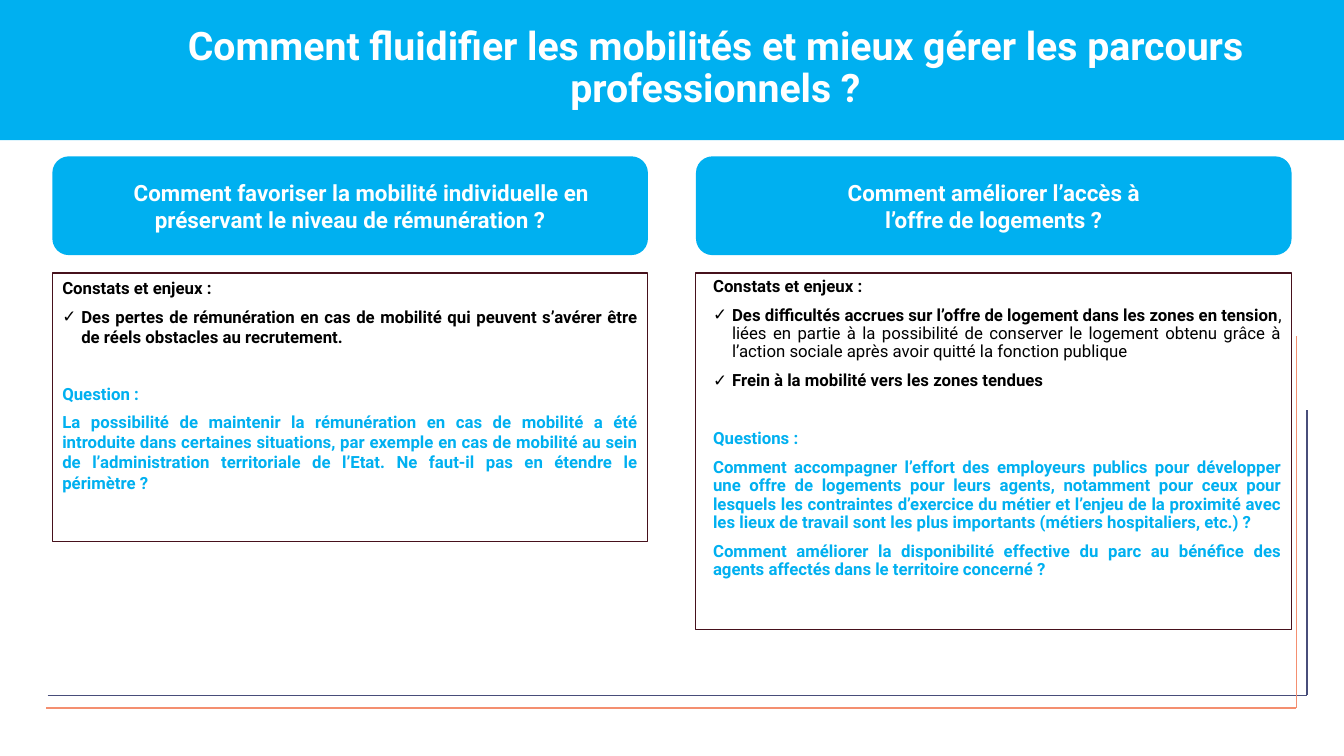
from lxml import etree
from pptx import Presentation
from pptx.dml.color import RGBColor
from pptx.enum.shapes import MSO_CONNECTOR, MSO_SHAPE
from pptx.enum.text import MSO_ANCHOR, MSO_AUTO_SIZE, PP_ALIGN
from pptx.oxml.ns import qn
from pptx.util import Cm, Pt

STRAIGHT = MSO_CONNECTOR.STRAIGHT
RECTANGLE, ROUNDED = MSO_SHAPE.RECTANGLE, MSO_SHAPE.ROUNDED_RECTANGLE
TOP, MIDDLE = MSO_ANCHOR.TOP, MSO_ANCHOR.MIDDLE
LEFT, CENTER, JUSTIFY = PP_ALIGN.LEFT, PP_ALIGN.CENTER, PP_ALIGN.JUSTIFY
NO_AUTOFIT = MSO_AUTO_SIZE.NONE

COLOURS = {
    "blue": "00B0F0",
    "white": "FFFFFF",
    "black": "000000",
    "plum": "46111C",
    "navy": "484D7A",
    "coral": "F48F70",
}
FONT = "Roboto"
HANGING = 0.48
COLUMN_WIDTH = 15.01
HEADING_TOP, HEADING_HEIGHT = 3.94, 2.49
BODY_TOP = 6.88


def colour(name):
    return RGBColor.from_string(COLOURS[name])


def apply(target, values):
    for name, value in values.items():
        setattr(target, name, value)


class SlideBuilder:
    def __init__(self, presentation):
        self.slide = presentation.slides.add_slide(presentation.slide_layouts[5])

    def line(self, start_x, start_y, end_x, end_y, line_colour):
        connector = self.slide.shapes.add_connector(
            STRAIGHT, Cm(start_x), Cm(start_y), Cm(end_x), Cm(end_y))
        connector.line.color.rgb = colour(line_colour)
        connector.line.width = Pt(1)
        etree.SubElement(connector._element.spPr, qn("a:effectLst"))

    def paragraph(self, paragraph, runs, size, text_colour, bullet=False,
                  margin=0, indent=0, **values):
        properties = paragraph._p.get_or_add_pPr()
        properties.set("marL", str(Cm(margin)))
        properties.set("indent", str(Cm(indent)))
        properties.set("hangingPunct", "0")
        if bullet:
            etree.SubElement(properties, qn("a:buFont"), typeface=FONT)
            etree.SubElement(properties, qn("a:buChar"), char="✓")
        apply(paragraph, values)
        for text, bold in runs:
            run = paragraph.add_run()
            run.text = text
            apply(run.font, {"name": FONT, "size": Pt(size), "bold": bold})
            run.font.color.rgb = colour(text_colour)

    def frame(self, shape, anchor):
        apply(shape.text_frame, {
            "word_wrap": True, "auto_size": NO_AUTOFIT, "vertical_anchor": anchor})
        return shape.text_frame

    def title(self, text):
        shape = self.slide.shapes.title
        apply(shape, {"left": Cm(0), "top": Cm(-0.08),
                      "width": Cm(33.87), "height": Cm(3.61)})
        shape.fill.solid()
        shape.fill.fore_color.rgb = colour("blue")
        frame = self.frame(shape, MIDDLE)
        apply(frame, {"margin_left": Cm(2.39), "margin_right": Cm(0.2),
                      "margin_top": Cm(0.2), "margin_bottom": Cm(0.2)})
        self.paragraph(frame.paragraphs[0], [(text, True)], 28, "white",
                       alignment=CENTER, line_spacing=0.9, space_before=Pt(0))

    def box(self, kind, left, top, height, fill=None, border=None, anchor=TOP):
        shape = self.slide.shapes.add_shape(
            kind, Cm(left), Cm(top), Cm(COLUMN_WIDTH), Cm(height))
        shape.shadow.inherit = False
        if fill:
            shape.fill.solid()
            shape.fill.fore_color.rgb = colour(fill)
        else:
            shape.fill.background()
        if border:
            shape.line.color.rgb = colour(border)
            shape.line.width = Pt(0.75)
        else:
            shape.line.fill.background()
        return self.frame(shape, anchor)

    def heading(self, left, lines, indent=0):
        frame = self.box(ROUNDED, left, HEADING_TOP, HEADING_HEIGHT,
                         fill="blue", anchor=MIDDLE)
        for index, text in enumerate(lines):
            paragraph = frame.add_paragraph() if index else frame.paragraphs[0]
            self.paragraph(paragraph, [(text, True)], 16, "white",
                           indent=indent, alignment=CENTER)

    def body(self, left, height, items, margin, question_gap, spacing):
        frame = self.box(RECTANGLE, left, BODY_TOP, height, border="plum")
        for index, (role, runs) in enumerate(items):
            bullet = role == "finding"
            before = {"label": 0, "question label": question_gap}.get(role, 6)
            self.paragraph(
                frame.add_paragraph() if index else frame.paragraphs[0],
                runs, 12, "blue" if role.startswith("question") else "black",
                bullet=bullet,
                margin=margin + HANGING * bullet,
                indent=-HANGING * bullet,
                alignment=LEFT if role == "label" else JUSTIFY,
                space_before=Pt(before), **spacing)


LEFT_COLUMN, RIGHT_COLUMN = 1.32, 17.54

MOBILITY = [
    ("label", [("Constats et enjeux :", True)]),
    ("finding", [("Des pertes de rémunération en cas de mobilité qui peuvent s’avérer "
                  "être de réels obstacles au recrutement.", True)]),
    ("question label", [("Question :", True)]),
    ("question", [("La possibilité de maintenir la rémunération en cas de mobilité a été "
                   "introduite dans certaines situations, par exemple en cas de mobilité "
                   "au sein de l’administration territoriale de l’Etat. Ne faut-il pas en "
                   "étendre le périmètre ?", True)]),
]
HOUSING = [
    ("label", [("Constats et enjeux :", True)]),
    ("finding", [("Des difficultés accrues sur l’offre de logement dans les zones en "
                  "tension", True),
                 (", liées en partie à la possibilité de conserver le logement obtenu "
                  "grâce à l’action sociale après avoir quitté la fonction publique",
                  False)]),
    ("finding", [("Frein à la mobilité vers les zones tendues", True)]),
    ("question label", [("Questions :", True)]),
    ("question", [("Comment accompagner l’effort des employeurs publics pour développer "
                   "une offre de logements pour leurs agents, notamment pour ceux pour "
                   "lesquels les contraintes d’exercice du métier et l’enjeu de la "
                   "proximité avec les lieux de travail sont les plus importants (métiers "
                   "hospitaliers, etc.) ?", True)]),
    ("question", [("Comment améliorer la disponibilité effective du parc au bénéfice des "
                   "agents affectés dans le territoire concerné ?", True)]),
]


def main():
    presentation = Presentation()
    apply(presentation, {"slide_width": Cm(33.87), "slide_height": Cm(19.05)})
    builder = SlideBuilder(presentation)

    for left, right, bottom, top, line_colour in [
        (1.2, 32.94, 17.52, 10.32, "navy"),
        (1.16, 32.67, 17.84, 8.46, "coral"),
    ]:
        builder.line(left, bottom, right, bottom, line_colour)
        builder.line(right, bottom, right, top, line_colour)

    builder.title("Comment fluidifier les mobilités et mieux gérer les parcours "
                  "professionnels ?")
    builder.heading(LEFT_COLUMN, ["Comment favoriser la mobilité individuelle en "
                                  "préservant le niveau de rémunération ?"], indent=0.56)
    builder.body(LEFT_COLUMN, 6.76, MOBILITY, 0, 26, {})
    builder.heading(RIGHT_COLUMN, ["Comment améliorer l’accès à",
                                   "l’offre de logements ?"])
    builder.body(RIGHT_COLUMN, 8.99, HOUSING, 0.18, 26.5,
                 {"line_spacing": 0.9, "space_after": Pt(1.8)})

    presentation.save("out.pptx")


if __name__ == "__main__":
    main()
